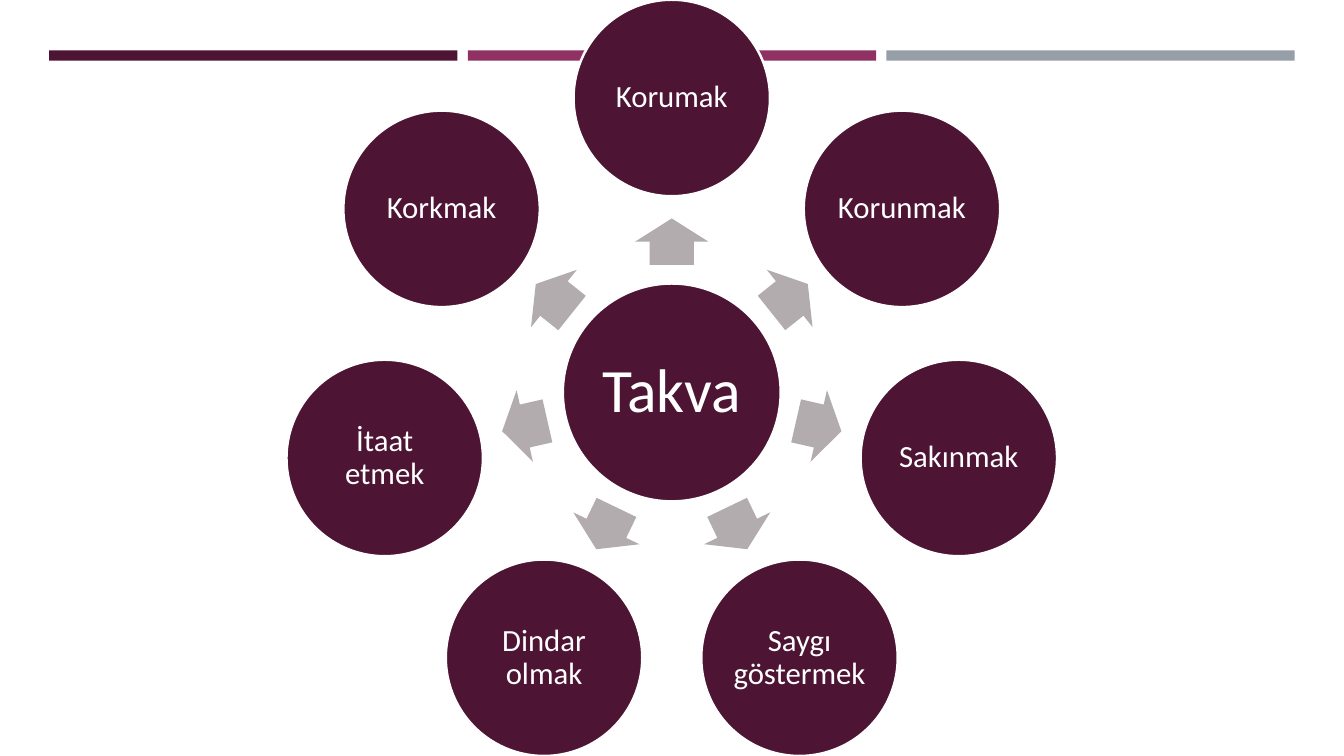
import math
from dataclasses import dataclass

from pptx import Presentation
from pptx import util as u
from pptx.dml import color
from pptx.enum import shapes, text


@dataclass
class Theme:
    plum: str = "4D1434"
    magenta: str = "903163"
    slate: str = "969FA7"
    arrow: str = "B2ACAE"
    white: str = "FFFFFF"
    font: str = "Calibri"
    hub_size: int = 44
    ring_size: int = 22


theme = Theme()


def add_filled(kind, left, top, width, height, fill):
    shape = slide.shapes.add_shape(kind, u.Cm(left), u.Cm(top), u.Cm(width), u.Cm(height))
    shape.shadow.inherit = False
    shape.fill.solid()
    shape.fill.fore_color.rgb = color.RGBColor.from_string(fill)
    shape.line.fill.background()
    return shape


def add_circle(x, y, diameter, words, size, inset):
    shape = add_filled(shapes.MSO_SHAPE.OVAL, x - diameter / 2, y - diameter / 2,
                       diameter, diameter, theme.plum)
    shape.line.color.rgb = color.RGBColor.from_string(theme.white)
    shape.line.width = u.Pt(1.75)
    frame = shape.text_frame
    frame.word_wrap = True
    frame.vertical_anchor = text.MSO_ANCHOR.MIDDLE
    frame.margin_left = frame.margin_right = u.Cm(inset)
    frame.margin_top = frame.margin_bottom = u.Cm(inset)
    paragraph = frame.paragraphs[0]
    paragraph.alignment = text.PP_ALIGN.CENTER
    paragraph.line_spacing = 0.9
    run = paragraph.add_run()
    run.text = words
    run.font.name = theme.font
    run.font.size = u.Pt(size)
    run.font.color.rgb = color.RGBColor.from_string(theme.white)


presentation = Presentation()
presentation.slide_width = u.Cm(33.87)
presentation.slide_height = u.Cm(19.05)
slide = presentation.slides.add_slide(presentation.slide_layouts[6])

# Three bars across the top
for column, fill in enumerate([theme.plum, theme.magenta, theme.slate]):
    add_filled(shapes.MSO_SHAPE.RECTANGLE, 1.24 + column * 10.55, 1.27, 10.29, 0.26, fill)

# Hub
center_x, center_y = 16.93, 9.89
add_circle(center_x, center_y, 5.49, "Takva", theme.hub_size, 0.15)

# Arrows and meanings, clockwise from the top
meanings = ["Korumak", "Korunmak", "Sakınmak", "Saygı göstermek",
            "Dindar olmak", "İtaat etmek", "Korkmak"]
arrow_radius, ring_radius = 3.8, 7.42
arrow_length, arrow_width = 1.17, 1.85

for index, meaning in enumerate(meanings):
    turn = 360 * index / len(meanings) - 90
    across, down = math.cos(math.radians(turn)), math.sin(math.radians(turn))
    arrow = add_filled(shapes.MSO_SHAPE.RIGHT_ARROW,
                       center_x + arrow_radius * across - arrow_length / 2,
                       center_y + arrow_radius * down - arrow_width / 2,
                       arrow_length, arrow_width, theme.arrow)
    arrow.adjustments[0] = 0.6
    arrow.adjustments[1] = 0.5
    arrow.rotation = turn % 360
    add_circle(center_x + ring_radius * across, center_y + ring_radius * down,
               4.95, meaning, theme.ring_size, 0.08)

presentation.save("out.pptx")
